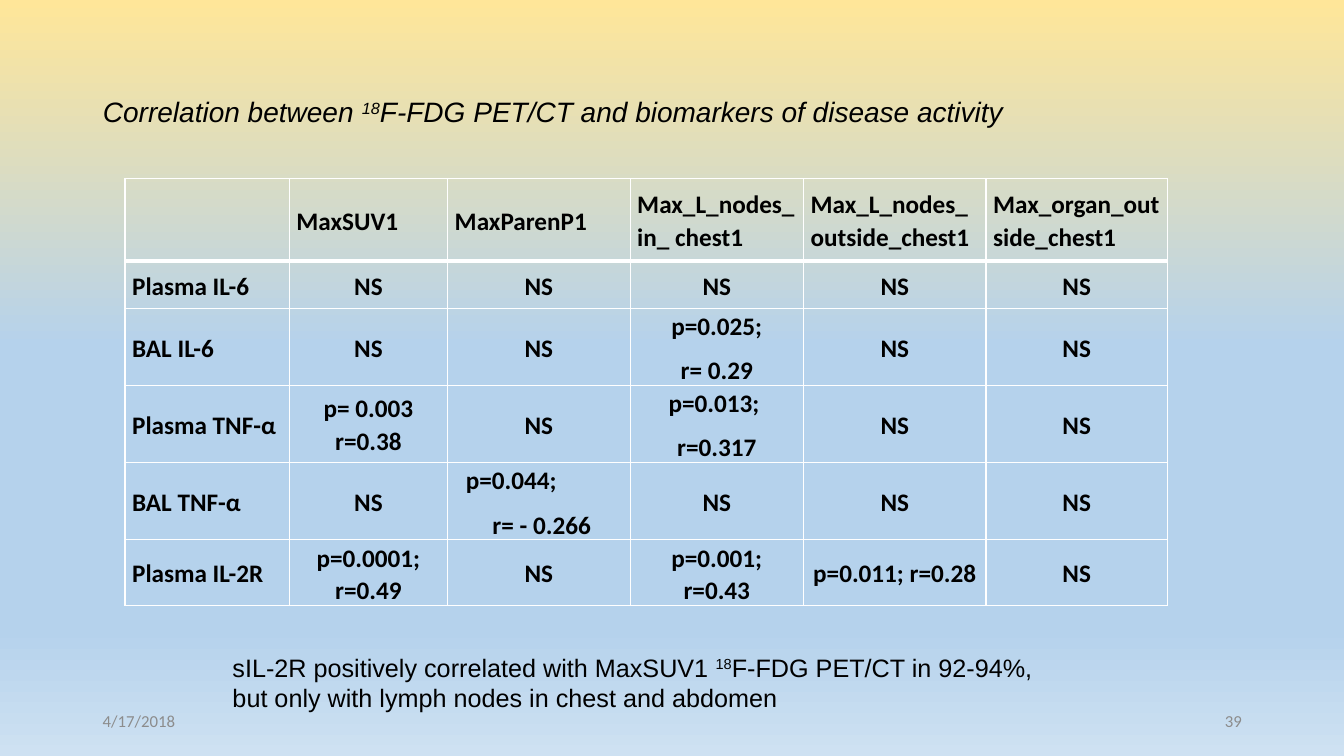
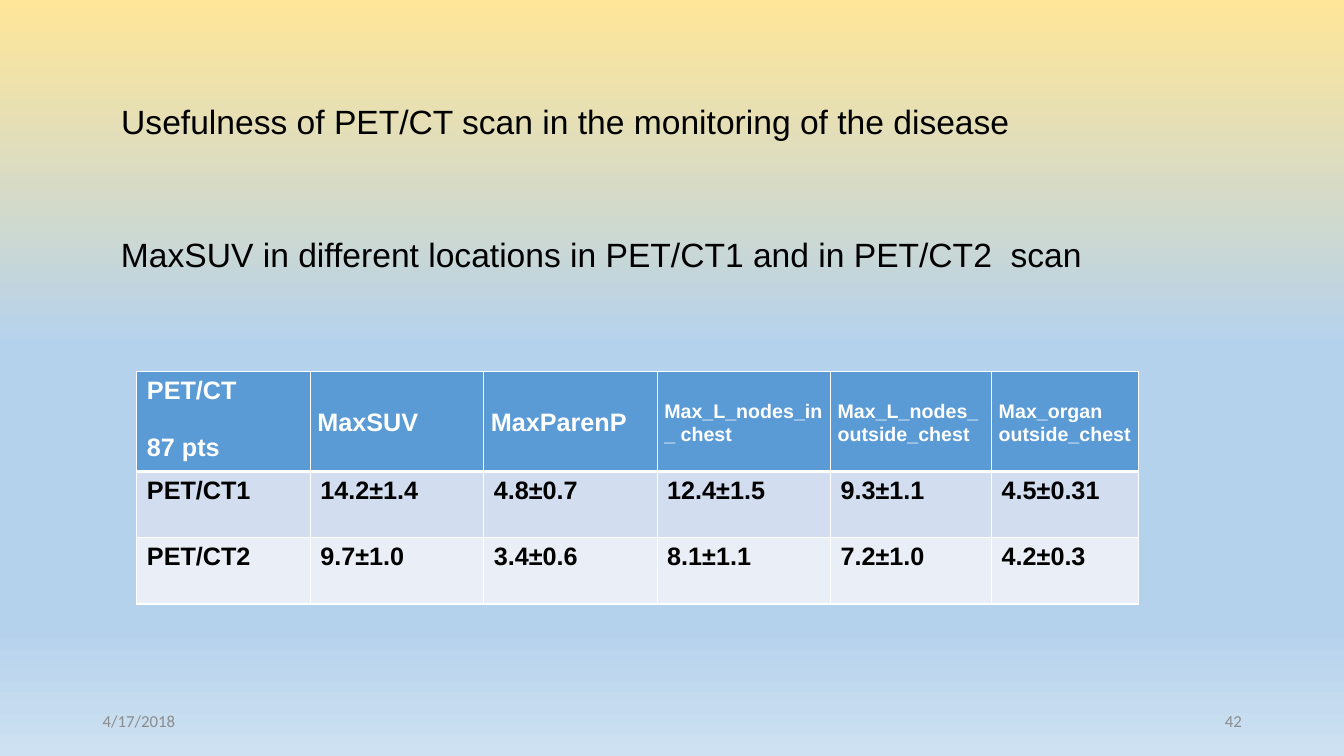
import pptx
import pptx.dml.color
import pptx.enum.text
import pptx.oxml
import pptx.oxml.ns
import pptx.util
from pptx.util import Cm

ALIGN = pptx.enum.text.PP_ALIGN
ANCHOR = pptx.enum.text.MSO_ANCHOR
qn = pptx.oxml.ns.qn
Pt = pptx.util.Pt

# Shared look
BLACK, WHITE, GREY = "000000", "FFFFFF", "8C8C8C"
HEADER, BAND_DARK, BAND_LIGHT = "5B9BD5", "D2DEEF", "EAEFF7"
BACKDROP = [(0, "FFE699"), (46, "B5D2EC"), (83, "B5D2EC"), (100, "CEE1F2")]
NO_STYLE = "{2D5ABB26-0587-4C30-8999-92F81FD0307C}"
DATE = "4/17/2018"

# Content: "^" encloses superscripts, a line break starts a paragraph
CORRELATION = {
    "title": "Correlation between ^18^F-FDG PET/CT and biomarkers of disease activity",
    "note": "sIL-2R positively correlated with MaxSUV1 ^18^F-FDG PET/CT in 92-94%,\n"
            "but only with lymph nodes in chest and abdomen",
    "columns": [4.14, 3.99, 4.6, 4.37, 4.6, 4.57],
    "heights": [2.08, 1.19, 1.88, 1.88, 1.88, 1.6],
    "rows": [
        ["", "MaxSUV1", "MaxParenP1", "Max_L_nodes_in_ chest1",
         "Max_L_nodes_outside_chest1", "Max_organ_outside_chest1"],
        ["Plasma IL-6", "NS", "NS", "NS", "NS", "NS"],
        ["BAL IL-6", "NS", "NS", "p=0.025;\nr= 0.29", "NS", "NS"],
        ["Plasma TNF-α", "p= 0.003 r=0.38", "NS", "p=0.013; \nr=0.317", "NS", "NS"],
        ["BAL TNF-α", "NS", "p=0.044;\n r= - 0.266", "NS", "NS", "NS"],
        ["Plasma IL-2R", "p=0.0001; r=0.49", "NS", "p=0.001; r=0.43",
         "p=0.011; r=0.28", "NS"],
    ],
}
MONITORING = {
    "title": "Usefulness of PET/CT scan in the monitoring of the disease",
    "subtitle": "MaxSUV in different locations in PET/CT1 and in PET/CT2  scan",
    "columns": [4.37, 4.37, 4.37, 4.37, 4.06, 3.71],
    "heights": [2.39, 1.67, 1.67],
    "rows": [
        ["PET/CT\n87 pts", "MaxSUV", "MaxParenP", "Max_L_nodes_in_ chest",
         "Max_L_nodes_outside_chest", "Max_organ outside_chest"],
        ["PET/CT1", "14.2±1.4", "4.8±0.7", "12.4±1.5", "9.3±1.1", "4.5±0.31"],
        ["PET/CT2", "9.7±1.0", "3.4±0.6", "8.1±1.1", "7.2±1.0", "4.2±0.3"],
    ],
}


def rgb(colour):
    return pptx.dml.color.RGBColor.from_string(colour)


def write(tf, text, size, font="Arial", colour=BLACK, bold=None, italic=None,
          align=ALIGN.LEFT, spacing=None, after=None):
    for i, line in enumerate(text.split("\n")):
        p = tf.add_paragraph() if i else tf.paragraphs[0]
        p.alignment, p.line_spacing = align, spacing
        if after is not None:
            p.space_after = Pt(after)
        for j, piece in enumerate(line.split("^")):
            r = p.add_run()
            r.text = piece
            r.font.name, r.font.size = font, Pt(size)
            r.font.bold, r.font.italic = bold, italic
            r.font.color.rgb = rgb(colour)
            if j % 2:
                r.font._element.set("baseline", "30000")


def place(sp, left, top, width, height):
    sp.left, sp.top, sp.width, sp.height = map(Cm, (left, top, width, height))


def add_text(s, box, text, size, anchor=ANCHOR.MIDDLE, **style):
    sp = s.shapes.add_textbox(*map(Cm, box))
    sp.text_frame.word_wrap = True
    sp.text_frame.vertical_anchor = anchor
    write(sp.text_frame, text, size, **style)


def set_backdrop(master):
    master.background.fill.gradient()
    grad = master.element.find(".//" + qn("a:gradFill"))
    stops = "".join(f'<a:gs pos="{pos * 1000}"><a:srgbClr val="{colour}"/></a:gs>'
                    for pos, colour in BACKDROP)
    grad.getparent().replace(grad, pptx.oxml.parse_xml(
        f'<a:gradFill {pptx.oxml.ns.nsdecls("a")} rotWithShape="1"><a:gsLst>{stops}</a:gsLst>'
        '<a:lin ang="5400000" scaled="0"/></a:gradFill>'))


def add_slide(prs, title, left, top, size, number, italic=None):
    s = prs.slides.add_slide(prs.slide_layouts[5])
    sp = s.shapes.title
    place(sp, left, top, 29.21, 3.68)
    tf = sp.text_frame
    tf.auto_size = pptx.enum.text.MSO_AUTO_SIZE.NONE
    tf.vertical_anchor = ANCHOR.MIDDLE
    write(tf, title, size, italic=italic, spacing=0.9)
    for x, text, align in [(2.34, DATE, ALIGN.LEFT), (23.93, number, ALIGN.RIGHT)]:
        add_text(s, (x, 17.65, 7.62, 1.02), text, 12, font="Calibri", colour=GREY, align=align)
    return s


def add_borders(cell, row):
    widths = {"lnL": 1, "lnR": 1, "lnT": 3 if row == 1 else 1, "lnB": 3 if row == 0 else 1}
    for side, width in widths.items():
        cell._tc.get_or_add_tcPr().append(pptx.oxml.parse_xml(
            f'<a:{side} {pptx.oxml.ns.nsdecls("a")} w="{Pt(width)}"><a:solidFill>'
            f'<a:srgbClr val="{WHITE}"/></a:solidFill></a:{side}>'))


def add_table(s, left, top, data, style_cell):
    cols, heights = data["columns"], data["heights"]
    frame = s.shapes.add_table(len(heights), len(cols), Cm(left), Cm(top),
                               Cm(sum(cols)), Cm(sum(heights)))
    table = frame.table
    table.first_row = table.horz_banding = False
    table._tbl.tblPr.find(qn("a:tableStyleId")).text = NO_STYLE
    for col, width in zip(table.columns, cols):
        col.width = Cm(width)
    for i, (row, height) in enumerate(zip(table.rows, heights)):
        row.height = Cm(height)
        for j, cell in enumerate(row.cells):
            add_borders(cell, i)
            style_cell(cell, i, j, data["rows"][i][j])
    return table


def tighten(cell):
    cell.vertical_anchor = ANCHOR.MIDDLE
    cell.margin_left = cell.margin_right = Cm(0.18)
    cell.margin_top, cell.margin_bottom = Cm(0.03), Cm(0)


def correlation_cell(cell, i, j, text):
    tighten(cell)
    cell.fill.background()
    if text:
        write(cell.text_frame, text, 18, font="Calibri", bold=True, spacing=1.07, after=8,
              align=ALIGN.CENTER if i and j else ALIGN.LEFT)


def monitoring_cell(cell, i, j, text):
    cell.fill.solid()
    cell.fill.fore_color.rgb = rgb((HEADER, BAND_DARK, BAND_LIGHT)[i])
    colour = BLACK if i else WHITE
    if i == 0 and j:
        tighten(cell)
        write(cell.text_frame, text, 18 if j < 3 else 14, colour=colour, bold=True,
              spacing=1.07, after=8)
    else:
        write(cell.text_frame, text, 18, colour=colour, bold=True)
        for p in cell.text_frame.paragraphs[1:]:
            p.space_before = Pt(20.7)


def main():
    prs = pptx.Presentation()
    prs.slide_width, prs.slide_height = Cm(33.87), Cm(19.05)
    set_backdrop(prs.slide_master)

    # Correlation with biomarkers
    s = add_slide(prs, CORRELATION["title"], 2.34, 1.02, 20, "39", italic=True)
    table = add_table(s, 3.15, 4.5, CORRELATION, correlation_cell)
    p = table.cell(4, 2).text_frame.paragraphs[0]
    p.alignment = ALIGN.LEFT
    p._p.get_or_add_pPr().set("marL", str(Cm(0.28)))
    add_text(s, (5.61, 16.31, 21.11, 1.83), CORRELATION["note"], 18, anchor=ANCHOR.TOP)

    # Monitoring of the disease
    s = add_slide(prs, MONITORING["title"], 2.8, 1.27, 24, "42")
    add_table(s, 3.45, 9.37, MONITORING, monitoring_cell)
    add_text(s, (2.8, 4.62, 29.21, 3.68), MONITORING["subtitle"], 24, spacing=0.9)

    prs.save("out.pptx")


if __name__ == "__main__":
    main()
